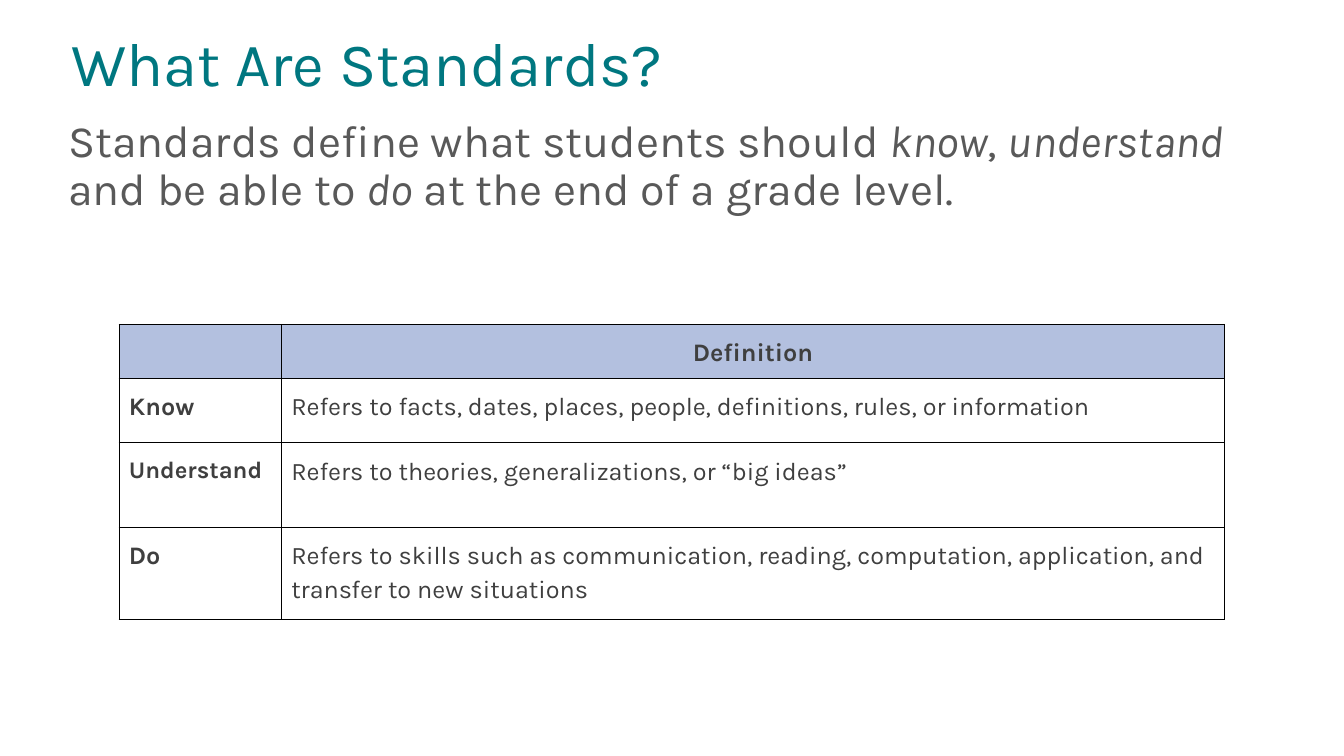
from lxml import etree
from pptx import Presentation
from pptx.dml.color import RGBColor
from pptx.enum import text
from pptx.oxml import ns
from pptx.util import Cm, Pt

FONT = "Karla"
HUES = {"title": "007780", "body": "595959", "cell": "3F3F3F",
        "head": "B3C0DF", "line": "000000"}

INTRO = [("Standards define what students should", False), (" know", True),
         (", ", False), ("understand", True), (" and be able to ", False),
         ("do", True), (" at the end of a grade level.", False)]

# Term, size of the term, definition
TERMS = [
    ("Know", 18, "Refers to facts, dates, places, people, definitions, "
                 "rules, or information"),
    ("Understand", 17, "Refers to theories, generalizations, or “big ideas”"),
    ("Do", 18, "Refers to skills such as communication, reading, "
               "computation, application, and transfer to new situations"),
]
WIDTHS = [4.09, 23.77]
HEIGHTS = [1.27, 1.63, 2.13, 2.31]


def add_run(para, words, size, hue, bold=False, slant=False):
    run = para.add_run()
    run.text = words
    font = run.font
    font.name, font.size = FONT, Pt(size)
    font.bold, font.italic = bold, slant
    font.color.rgb = RGBColor.from_string(HUES[hue])


def set_frame(shape, left, top, width, height):
    shape.left, shape.top = Cm(left), Cm(top)
    shape.width, shape.height = Cm(width), Cm(height)
    frame = shape.text_frame
    frame.word_wrap = True
    frame.auto_size = text.MSO_AUTO_SIZE.NONE
    frame.vertical_anchor = text.MSO_ANCHOR.TOP
    para = frame.paragraphs[0]
    para.alignment = text.PP_ALIGN.LEFT
    para.line_spacing = 0.9
    para.space_before = Pt(0)
    return para


def add_edges(cell):
    props = cell._tc.get_or_add_tcPr()
    for side in ("lnL", "lnR", "lnT", "lnB"):
        line = etree.SubElement(props, ns.qn("a:" + side), w=str(Pt(0.75)))
        fill = etree.SubElement(line, ns.qn("a:solidFill"))
        etree.SubElement(fill, ns.qn("a:srgbClr"), val=HUES["line"])


def fill_cell(cell, words, size=18, bold=False, head=False):
    cell.margin_left = cell.margin_right = Cm(0.25)
    cell.margin_top = cell.margin_bottom = Cm(0.25)
    add_edges(cell)
    if head:
        cell.fill.solid()
        cell.fill.fore_color.rgb = RGBColor.from_string(HUES["head"])
    else:
        cell.fill.background()
    if words:
        para = cell.text_frame.paragraphs[0]
        para.line_spacing = 1.15
        para.alignment = text.PP_ALIGN.CENTER if head else text.PP_ALIGN.LEFT
        add_run(para, words, size, "cell", bold)


def add_terms(slide):
    frame = slide.shapes.add_table(len(HEIGHTS), len(WIDTHS), Cm(3), Cm(8.17),
                                   Cm(sum(WIDTHS)), Cm(sum(HEIGHTS)))
    table = frame.table
    table.first_row = table.horz_banding = False
    for col, width in zip(table.columns, WIDTHS):
        col.width = Cm(width)
    for row, height in zip(table.rows, HEIGHTS):
        row.height = Cm(height)
    for col, words in enumerate(("", "Definition")):
        fill_cell(table.cell(0, col), words, bold=True, head=True)
    for row, (term, size, sense) in enumerate(TERMS, 1):
        fill_cell(table.cell(row, 0), term, size, bold=True)
        fill_cell(table.cell(row, 1), sense)


def main():
    deck = Presentation()
    deck.slide_width, deck.slide_height = Cm(33.87), Cm(19.05)
    slide = deck.slides.add_slide(deck.slide_layouts[5])

    # Title
    para = set_frame(slide.shapes.title, 1.55, 0.71, 24.97, 3.66)
    add_run(para, "What Are Standards?", 44, "title")

    # Introduction
    box = slide.shapes.add_textbox(0, 0, 0, 0)
    para = set_frame(box, 1.47, 2.87, 30.63, 5.03)
    for words, slant in INTRO:
        add_run(para, words, 32, "body", slant=slant)

    # Definitions
    add_terms(slide)
    deck.save("out.pptx")


if __name__ == "__main__":
    main()
